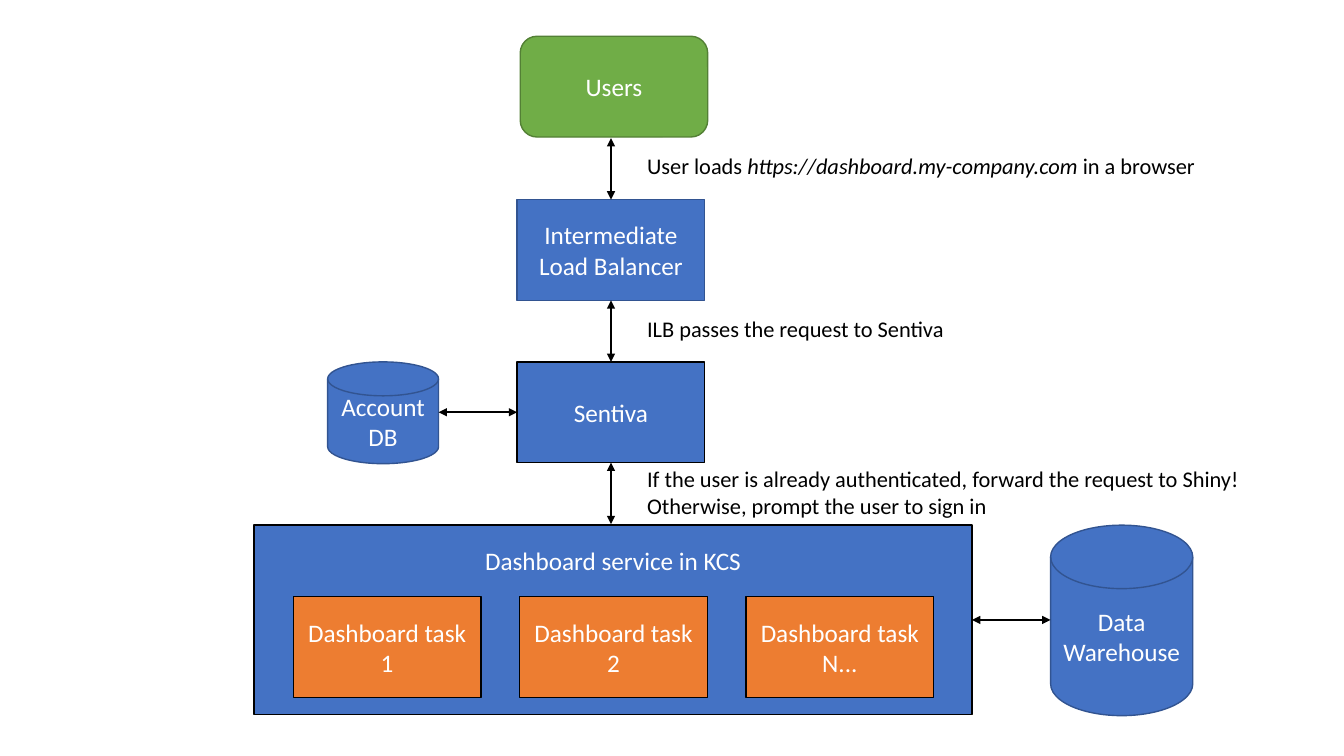
from lxml import etree
from pptx import Presentation
from pptx.dml.color import RGBColor
from pptx.enum.shapes import MSO_CONNECTOR as Connector, MSO_SHAPE as Shape
from pptx.enum.text import MSO_ANCHOR as Anchor, PP_ALIGN as Align
from pptx.oxml.ns import qn
from pptx.util import Inches, Pt

COLORS = {
    "blue": "4472C4", "blue_edge": "325491",
    "green": "70AD47", "green_edge": "538035",
    "orange": "ED7D31", "black": "000000", "white": "FFFFFF",
}
TOP, LEFT, BOTTOM, RIGHT = range(4)


def color(name):
    return RGBColor.from_string(COLORS[name])


class Diagram:
    """Style and drawing methods for one page."""

    font = "Calibri"
    box_size = 18
    note_size = 16

    def __init__(self, page):
        self.page = page

    def style(self, para, size, tint):
        para.font.name = self.font
        para.font.size = Pt(size)
        para.font.color.rgb = color(tint)

    def node(self, text, left, top, width=1.86, height=1.0, fill="blue",
             edge="black", kind=Shape.RECTANGLE):
        box = self.page.shapes.add_shape(
            kind, Inches(left), Inches(top), Inches(width), Inches(height))
        box.shadow.inherit = False
        box.fill.solid()
        box.fill.fore_color.rgb = color(fill)
        box.line.color.rgb = color(edge)
        box.line.width = Pt(1)
        frame = box.text_frame
        frame.word_wrap = True
        frame.vertical_anchor = Anchor.MIDDLE
        para = frame.paragraphs[0]
        para.text = text
        para.alignment = Align.CENTER
        self.style(para, self.box_size, "white")
        return box

    def note(self, lines, top, height=0.37):
        """Each line is a list of (text, italic) spans."""
        box = self.page.shapes.add_textbox(
            Inches(6.32), Inches(top), Inches(6.96), Inches(height))
        frame = box.text_frame
        frame.word_wrap = True
        for index, spans in enumerate(lines):
            para = frame.add_paragraph() if index else frame.paragraphs[0]
            self.style(para, self.note_size, "black")
            for text, italic in spans:
                span = para.add_run()
                span.text = text
                span.font.italic = italic

    def arrow(self, start, end, begin_at=None, end_at=None):
        """Two-headed arrow; begin_at and end_at are (box, side) pairs."""
        line = self.page.shapes.add_connector(
            Connector.STRAIGHT, *(Inches(value) for value in start + end))
        if begin_at:
            line.begin_connect(*begin_at)
        if end_at:
            line.end_connect(*end_at)
        line.line.color.rgb = color("black")
        line.line.width = Pt(1.5)
        outline = line.line._get_or_add_ln()
        for tag in ("a:headEnd", "a:tailEnd"):
            etree.SubElement(outline, qn(tag), type="triangle")
        etree.SubElement(line._element.spPr, qn("a:effectLst"))


def main():
    deck = Presentation()
    deck.slide_width, deck.slide_height = Inches(13.33), Inches(7.5)
    diagram = Diagram(deck.slides.add_slide(deck.slide_layouts[6]))

    # Request chain
    diagram.node("Users", 5.16, 0.36, fill="green", edge="green_edge",
                 kind=Shape.ROUNDED_RECTANGLE)
    balancer = diagram.node("Intermediate Load Balancer", 5.13, 1.98,
                            edge="blue_edge")
    sign_in = diagram.node("Sentiva", 5.13, 3.59)

    # Dashboard service and its tasks
    service = diagram.node("Dashboard service in KCS", 2.52, 5.21, 7.12, 1.88)
    service.text_frame.vertical_anchor = Anchor.TOP
    service.text_frame.margin_top = Inches(0.2)
    for index, number in enumerate(("1", "2", "N...")):
        diagram.node(f"Dashboard task {number}", 2.91 + 2.245 * index, 5.92,
                     fill="orange")

    # Data stores
    for text, left, top, width, height in (
            ("Account DB", 3.25, 3.59, 1.1, 1.01),
            ("Data Warehouse", 10.42, 5.21, 1.41, 1.89)):
        diagram.node(text, left, top, width, height, edge="blue_edge",
                     kind=Shape.FLOWCHART_MAGNETIC_DISK)

    # Arrows
    axis = 6.06
    diagram.arrow((axis, 1.98), (axis, 1.37), begin_at=(balancer, TOP))
    diagram.arrow((axis, 3.59), (axis, 2.98), (sign_in, TOP),
                  (balancer, BOTTOM))
    diagram.arrow((axis, 5.2), (axis, 4.59), end_at=(sign_in, BOTTOM))
    diagram.arrow((4.35, 4.09), (5.13, 4.09), end_at=(sign_in, LEFT))
    diagram.arrow((9.64, 6.15), (10.42, 6.15), begin_at=(service, RIGHT))

    # Notes beside the arrows
    diagram.note([[("User loads ", None),
                   ("https://dashboard.my-company.com", True),
                   (" in a browser", None)]], 1.46)
    diagram.note([[("ILB passes the request to Sentiva", None)]], 3.08)
    diagram.note([
        [("If the user is already authenticated, "
          "forward the request to Shiny!", None)],
        [("Otherwise, prompt the user to sign in", None)],
    ], 4.57, 0.64)

    deck.save("out.pptx")


if __name__ == "__main__":
    main()
